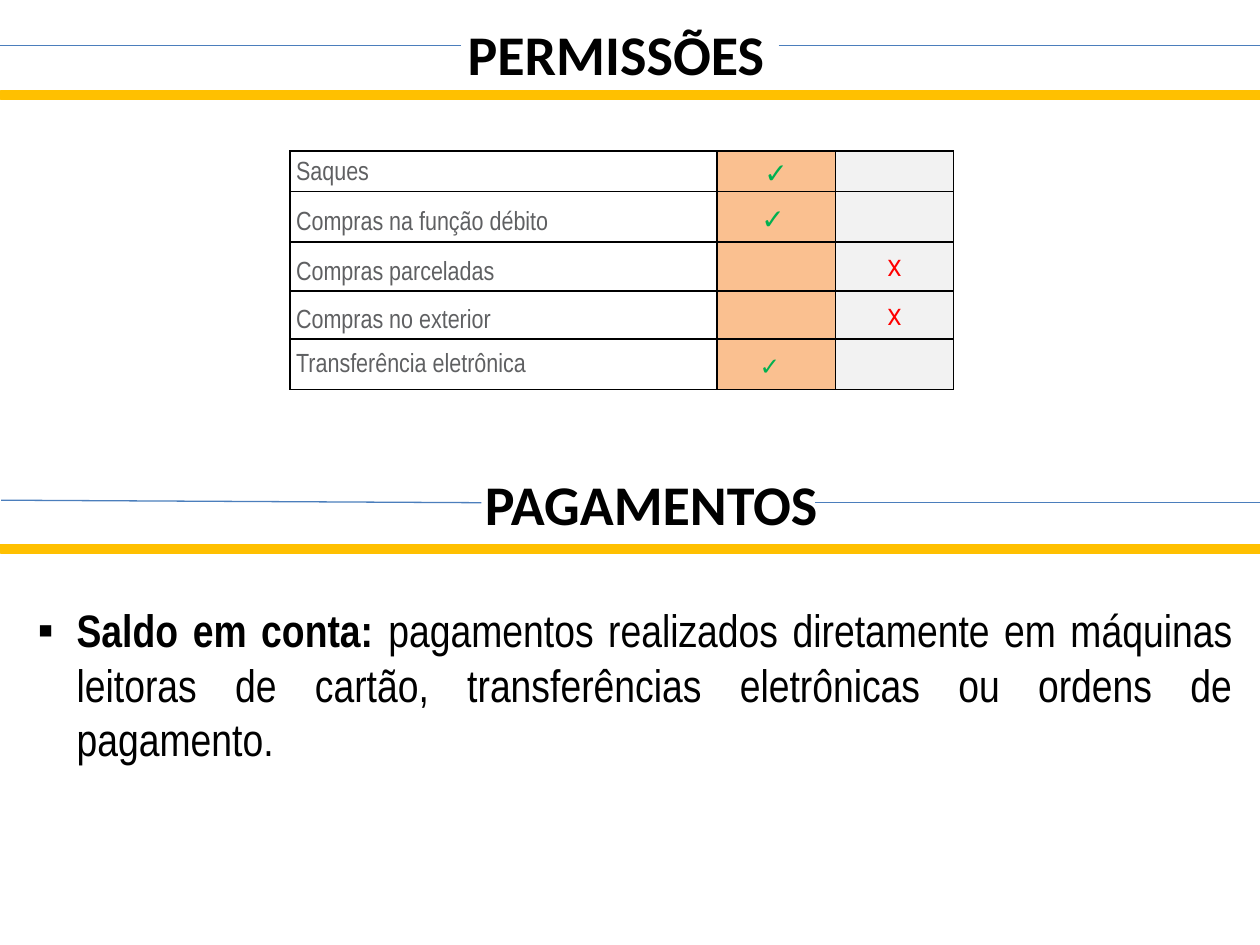
from dataclasses import dataclass
from lxml.etree import SubElement
from pptx import Presentation
from pptx.dml.color import RGBColor
from pptx.enum.shapes import MSO_CONNECTOR, MSO_SHAPE
from pptx.enum.text import MSO_ANCHOR, MSO_AUTO_SIZE, PP_ALIGN
from pptx.oxml.ns import qn
from pptx.util import Inches, Pt


@dataclass(frozen=True)
class Theme:
    black: str = "000000"
    label: str = "5F6062"
    allowed: str = "00B050"
    denied: str = "FF0000"
    allowed_fill: str = "FAC090"
    denied_fill: str = "F2F2F2"
    rule: str = "4B7EBC"
    bar: str = "FFC000"
    heading_font: str = "Calibri"
    body_font: str = "Arial Narrow"
    check_font: str = "Arial"
    cross_font: str = "Roboto"
    heading_size: int = 32
    body_size: int = 26
    label_size: int = 15
    check_size: int = 16
    small_check_size: int = 14
    cross_size: int = 13


THEME = Theme()
COLUMN_WIDTHS = (3.39, 0.94, 0.94)
PERMISSIONS = (
    ("Saques", True, 0.32, 1.15, 1.9, THEME.check_size, 0),
    ("Compras na função débito", True, 0.4, 1.55, 4.8, THEME.check_size, 0.05),
    ("Compras parceladas", False, 0.39, 1.55, 4.8, THEME.cross_size, 0),
    ("Compras no exterior", False, 0.38, 1.55, 4.8, THEME.cross_size, 0),
    ("Transferência eletrônica", True, 0.4, 1.15, 0.1, THEME.small_check_size, 0.1),
)


def color(value):
    return RGBColor.from_string(value)


def style_span(span, font, size, tint, bold=False, italic=False):
    span.font.name = font
    span.font.size = Pt(size)
    span.font.color.rgb = color(tint)
    span.font.bold = bold
    span.font.italic = italic


def format_heading(box, text, place, align):
    box.left, box.top, box.width, box.height = map(Inches, place)
    frame = box.text_frame
    frame.text = text
    frame.word_wrap = True
    frame.auto_size = MSO_AUTO_SIZE.NONE
    frame.vertical_anchor = MSO_ANCHOR.TOP
    para = frame.paragraphs[0]
    para.alignment = align
    para.line_spacing = 1.19
    style_span(para.runs[0], THEME.heading_font, THEME.heading_size, THEME.black, bold=True)


def add_rule(page, start, end):
    rule = page.shapes.add_connector(MSO_CONNECTOR.STRAIGHT, *map(Inches, start + end))
    rule.line.color.rgb = color(THEME.rule)
    rule.line.width = Pt(0.75)
    SubElement(rule._element.spPr, qn("a:effectLst"))


def add_bar(page, top):
    bar = page.shapes.add_shape(
        MSO_SHAPE.RECTANGLE, Inches(0.01), Inches(top), Inches(10), Inches(0.05))
    bar.shadow.inherit = False
    bar.fill.solid()
    bar.fill.fore_color.rgb = color(THEME.bar)
    bar.line.color.rgb = color(THEME.bar)
    bar.line.width = Pt(2)


def prepare_cell(cell, fill=None):
    cell.margin_left = cell.margin_right = cell.margin_top = cell.margin_bottom = 0
    cell.vertical_anchor = MSO_ANCHOR.MIDDLE
    properties = cell._tc.get_or_add_tcPr()
    for side in ("a:lnL", "a:lnR", "a:lnT", "a:lnB"):
        border = SubElement(properties, qn(side), w=str(Pt(1)))
        paint = SubElement(border, qn("a:solidFill"))
        SubElement(paint, qn("a:srgbClr"), val=THEME.black)
    if fill:
        cell.fill.solid()
        cell.fill.fore_color.rgb = color(fill)
    else:
        cell.fill.background()


def write_label(cell, text, spacing, before):
    cell.margin_left = Inches(0.05)
    para = cell.text_frame.paragraphs[0]
    para.text = text
    para.line_spacing = spacing
    para.space_before = Pt(before)
    style_span(para.runs[0], THEME.body_font, THEME.label_size, THEME.label)


def write_mark(cell, allowed, size, margin):
    cell.margin_right = Inches(margin)
    para = cell.text_frame.paragraphs[0]
    para.text = "✓" if allowed else "X"
    para.alignment = PP_ALIGN.CENTER
    para.line_spacing = 1.19
    para.space_after = Pt(6)
    font = THEME.check_font if allowed else THEME.cross_font
    tint = THEME.allowed if allowed else THEME.denied
    style_span(para.runs[0], font, size, tint, bold=allowed, italic=allowed)


def add_permissions_table(page):
    frame = page.shapes.add_table(
        len(PERMISSIONS), len(COLUMN_WIDTHS), Inches(2.3), Inches(1.2),
        Inches(sum(COLUMN_WIDTHS)), Inches(sum(entry[2] for entry in PERMISSIONS)))
    table = frame.table
    table.first_row = table.horz_banding = False
    for column, width in zip(table.columns, COLUMN_WIDTHS):
        column.width = Inches(width)
    for row, entry in zip(table.rows, PERMISSIONS):
        label, allowed, height, spacing, before, size, margin = entry
        row.height = Inches(height)
        for cell, fill in zip(row.cells, (None, THEME.allowed_fill, THEME.denied_fill)):
            prepare_cell(cell, fill)
        write_label(row.cells[0], label, spacing, before)
        write_mark(row.cells[1 if allowed else 2], allowed, size, margin)


def add_bullet_text(page, lead, detail):
    box = page.shapes.add_textbox(Inches(0.2), Inches(4.73), Inches(9.69), Inches(1.82))
    box.text_frame.word_wrap = True
    para = box.text_frame.paragraphs[0]
    para.alignment = PP_ALIGN.JUSTIFY
    for text, bold in ((lead, True), (detail, False)):
        span = para.add_run()
        span.text = text
        style_span(span, THEME.body_font, THEME.body_size, THEME.black, bold)
    properties = para._p.get_or_add_pPr()
    properties.set("marL", str(Inches(0.31)))
    properties.set("indent", str(-Inches(0.31)))
    SubElement(properties, qn("a:buFont"), typeface=THEME.check_font)
    SubElement(properties, qn("a:buChar"), char="▪")


def main():
    deck = Presentation()
    deck.slide_width, deck.slide_height = Inches(10), Inches(7.5)
    page = deck.slides.add_slide(deck.slide_layouts[5])
    format_heading(page.shapes.title, "PERMISSÕES ", (2.44, 0, 5, 0.94), PP_ALIGN.CENTER)
    add_permissions_table(page)
    add_rule(page, (6.18, 0.36), (10, 0.36))
    add_rule(page, (3.66, 0.36), (0, 0.36))
    add_bullet_text(
        page, "Saldo em conta: ",
        "pagamentos realizados diretamente em máquinas leitoras de cartão, "
        "transferências eletrônicas ou ordens de pagamento.")
    payments = page.shapes.add_textbox(0, 0, 0, 0)
    format_heading(payments, "PAGAMENTOS", (3.75, 3.58, 2.9, 0.94), PP_ALIGN.LEFT)
    add_rule(page, (3.82, 3.99), (0.01, 3.97))
    add_rule(page, (6.47, 3.99), (10, 3.99))
    for top in (0.73, 4.33):
        add_bar(page, top)
    deck.save("out.pptx")


if __name__ == "__main__":
    main()
